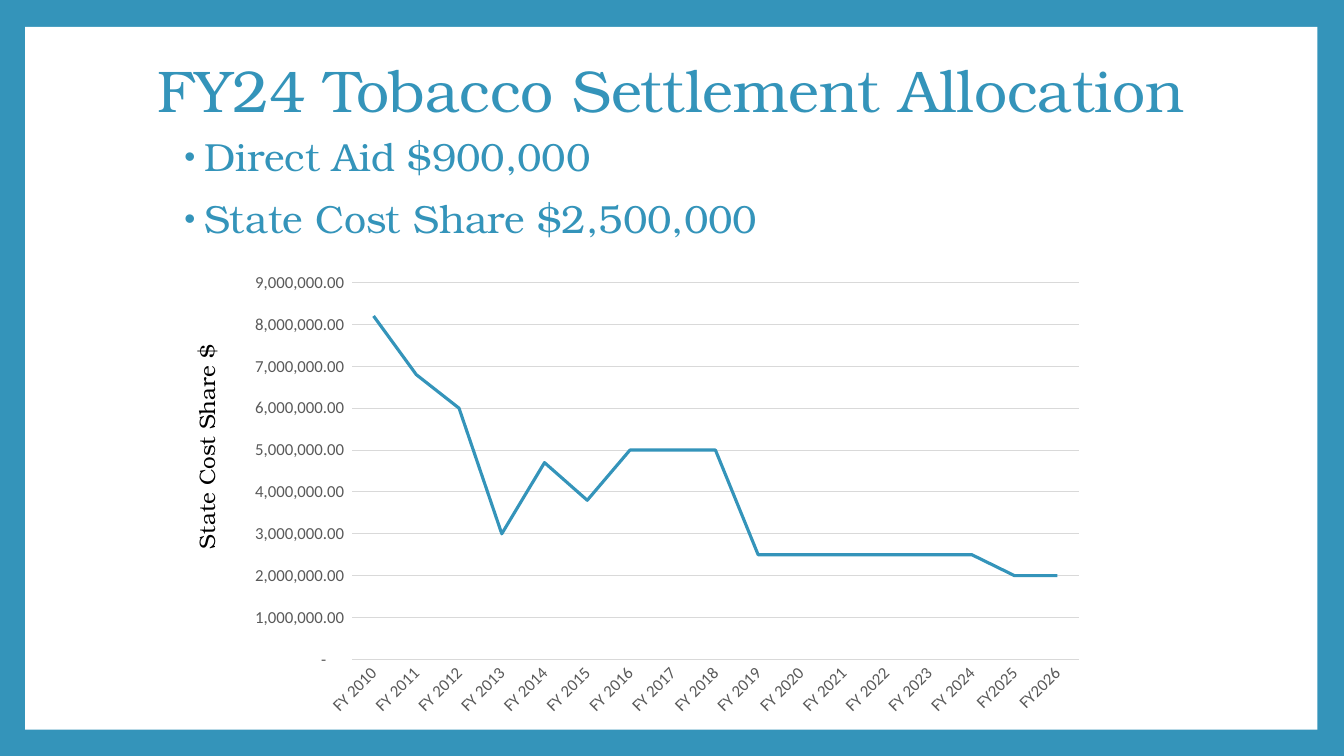
import pptx
import pptx.chart.data
import pptx.dml.color
import pptx.enum.chart
import pptx.enum.shapes
import pptx.enum.text
import pptx.oxml
import pptx.util

Pt = pptx.util.Pt
BLUE = pptx.dml.color.RGBColor(0x34, 0x94, 0xBA)
WHITE = pptx.dml.color.RGBColor(0xFF, 0xFF, 0xFF)
BLACK = pptx.dml.color.RGBColor(0, 0, 0)
LABEL_GRAY = pptx.dml.color.RGBColor(0x59, 0x59, 0x59)
GRID_GRAY = pptx.dml.color.RGBColor(0xD9, 0xD9, 0xD9)
SERIF = "TeX Gyre Bonum"
SANS = "Calibri"
A_NS = 'xmlns:a="http://schemas.openxmlformats.org/drawingml/2006/main"'
C_NS = 'xmlns:c="http://schemas.openxmlformats.org/drawingml/2006/chart"'


def style_font(font, name, size, color):
    font.name = name
    font.size = Pt(size)
    font.color.rgb = color


def add_text(slide, box, lines, size, color):
    shape = slide.shapes.add_textbox(*[Pt(length) for length in box])
    text_frame = shape.text_frame
    text_frame.word_wrap = True
    text_frame.text = "\n".join(lines)
    for paragraph in text_frame.paragraphs:
        style_font(paragraph.runs[0].font, SERIF, size, color)
    return shape


presentation = pptx.Presentation()
presentation.slide_width = Pt(960)
presentation.slide_height = Pt(540)
slide = presentation.slides.add_slide(presentation.slide_layouts[6])

# Blue frame around a white panel
slide.background.fill.solid()
slide.background.fill.fore_color.rgb = BLUE
panel = slide.shapes.add_shape(
    pptx.enum.shapes.MSO_SHAPE.RECTANGLE, Pt(18), Pt(19.2), Pt(923), Pt(502))
panel.shadow.inherit = False
panel.fill.solid()
panel.fill.fore_color.rgb = WHITE
panel.line.fill.background()

# Title
title = add_text(slide, (90, 13.5, 778, 106.5),
                 ["FY24 Tobacco Settlement Allocation"], 42, BLUE)
title.text_frame.vertical_anchor = pptx.enum.text.MSO_ANCHOR.MIDDLE
title.text_frame.paragraphs[0].alignment = pptx.enum.text.PP_ALIGN.CENTER
title.text_frame.paragraphs[0].line_spacing = 0.9

# Bulleted amounts
amounts = add_text(slide, (121, 95, 778, 318),
                   ["Direct Aid $900,000", "State Cost Share $2,500,000"], 28, BLUE)
for paragraph in amounts.text_frame.paragraphs:
    paragraph.line_spacing = 0.9
    paragraph.space_before = Pt(14)
    properties = paragraph._p.get_or_add_pPr()
    properties.set("marL", str(Pt(18)))
    properties.set("indent", str(-Pt(14.4)))
    for bullet in ('<a:buClr %s><a:srgbClr val="3494BA"/></a:buClr>',
                   '<a:buSzPct %s val="80000"/>',
                   '<a:buFont %s typeface="Arial"/>',
                   '<a:buChar %s char="•"/>'):
        properties.append(pptx.oxml.parse_xml(bullet % A_NS))

# Line chart of the state cost share
chart_data = pptx.chart.data.CategoryChartData()
chart_data.categories = ([f"FY {year}" for year in range(2010, 2025)]
                         + ["FY2025", "FY2026"])
chart_data.add_series("Series 1", (
    [8200000, 6800000, 6000000, 3000000, 4700000, 3800000]
    + [5000000] * 3 + [2500000] * 6 + [2000000] * 2))
chart = slide.shapes.add_chart(
    pptx.enum.chart.XL_CHART_TYPE.LINE,
    Pt(175.7), Pt(148.3), Pt(607), Pt(371.5), chart_data).chart
chart.has_legend = False
chart.has_title = False
style_font(chart.font, SANS, 10, BLACK)

series = chart.plots[0].series[0]
series.smooth = False
series.format.line.color.rgb = BLUE
series.format.line.width = Pt(2.25)
chart.plots[0].vary_by_categories = False

# Axes
for axis in (chart.category_axis, chart.value_axis):
    axis.major_tick_mark = pptx.enum.chart.XL_TICK_MARK.NONE
    axis.minor_tick_mark = pptx.enum.chart.XL_TICK_MARK.NONE
    style_font(axis.tick_labels.font, SANS, 12, LABEL_GRAY)

category_axis = chart.category_axis
category_axis.format.line.color.rgb = GRID_GRAY
category_axis.format.line.width = Pt(0.75)
category_axis._element.txPr.bodyPr.set("rot", "-2700000")

value_axis = chart.value_axis
value_axis.minimum_scale = 0
value_axis.maximum_scale = 9000000
value_axis.major_unit = 1000000
value_axis.format.line.fill.background()
value_axis.major_gridlines.format.line.color.rgb = GRID_GRAY
value_axis.major_gridlines.format.line.width = Pt(0.75)
value_axis.tick_labels.number_format = (
    r'_(* #,##0.00_);_(* \(#,##0.00\);_(* "-"??_);_(@_)')
value_axis.tick_labels.number_format_is_linked = False

# Fixed inner plot area
plot_area = chart._chartSpace.chart.plotArea
for layout in plot_area.findall("{*}layout"):
    plot_area.remove(layout)
plot_area.insert(0, pptx.oxml.parse_xml(
    f'<c:layout {C_NS}><c:manualLayout><c:layoutTarget val="inner"/>'
    '<c:xMode val="edge"/><c:yMode val="edge"/><c:x val="0.125"/>'
    '<c:y val="0.144"/><c:w val="0.855"/><c:h val="0.725"/>'
    '</c:manualLayout></c:layout>'))

# Rotated axis caption
caption = add_text(slide, (66.2, 304.5, 162.7, 26.7), ["State Cost Share $"], 16, BLACK)
caption.rotation = 270
caption.text_frame.word_wrap = False
caption.text_frame.auto_size = pptx.enum.text.MSO_AUTO_SIZE.SHAPE_TO_FIT_TEXT

presentation.save("out.pptx")
